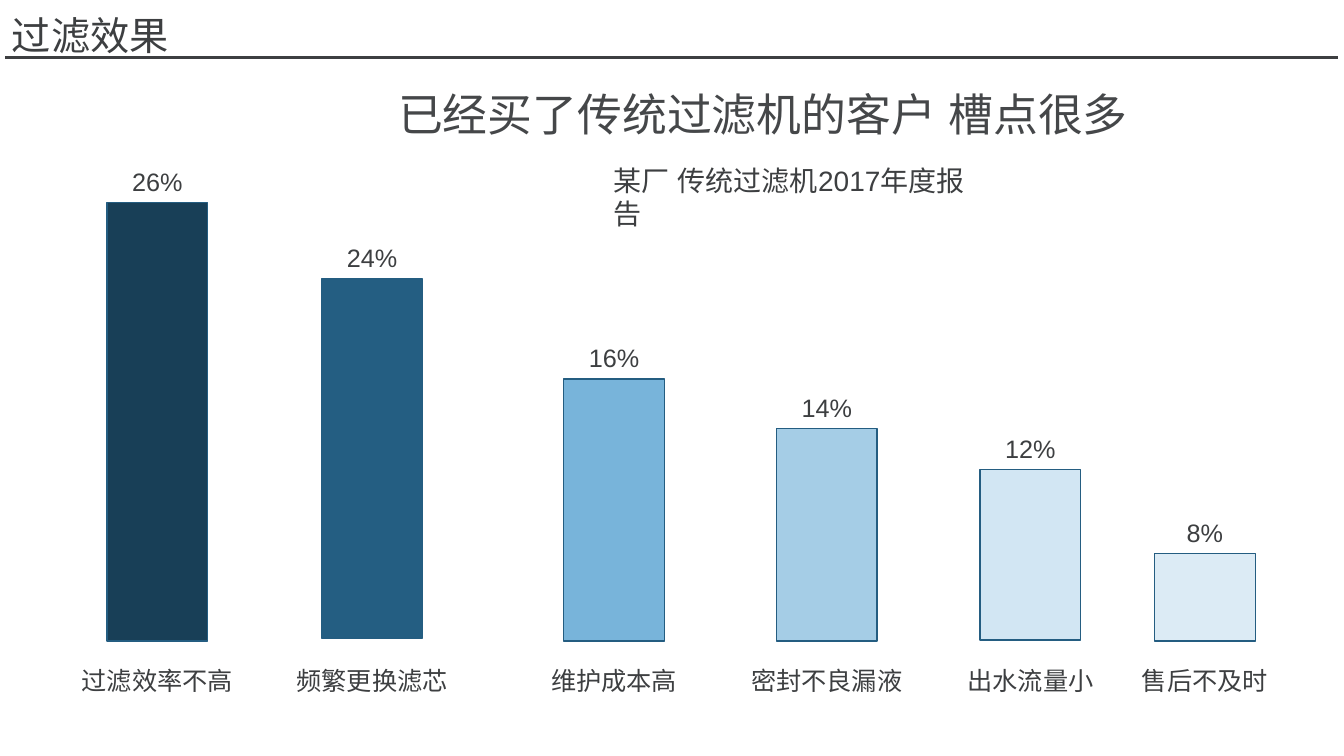
from pptx import Presentation
from pptx import util as u
from pptx.dml.color import RGBColor
from pptx.enum import shapes, text
from pptx.oxml.ns import qn
from lxml import etree

COLORS = {
    "text": "3D3F41",
    "headline": "454749",
    "outline": "245D81",
    "navy": "183F57",
    "blue": "245E82",
    "sky": "78B4DA",
    "light": "A5CDE6",
    "pale": "D2E6F3",
}

BAR_WIDTH = 1
LABEL_HEIGHT = 0.4
VALUE_RISE = 0.41
CATEGORY_TOP = 6.55

BARS = [
    ("过滤效率不高", "26%", 1.06, 2.01, 4.35, "navy", None),
    ("频繁更换滤芯", "24%", 3.19, 2.77, 3.56, "blue", None),
    ("维护成本高", "16%", 5.59, 3.76, 2.6, "sky", None),
    ("密封不良漏液", "14%", 7.7, 4.25, 2.11, "light", None),
    ("出水流量小", "12%", 9.72, 4.66, 1.69, "pale", None),
    ("售后不及时", "8%", 11.45, 5.49, 0.87, "pale", 77),
]


class SlideBuilder:
    """Draws styled elements on the current slide."""

    font = "Arial"

    def __init__(self, slide):
        self.slide = slide

    def color(self, name):
        return RGBColor.from_string(COLORS[name])

    def label(self, content, left, top, width, height, size=18,
              color="text", wrap=False, align=text.PP_ALIGN.LEFT):
        box = self.slide.shapes.add_textbox(
            u.Inches(left), u.Inches(top), u.Inches(width), u.Inches(height))
        frame = box.text_frame
        frame.text = content
        frame.word_wrap = wrap
        frame.auto_size = text.MSO_AUTO_SIZE.SHAPE_TO_FIT_TEXT
        paragraph = frame.paragraphs[0]
        paragraph.alignment = align
        for run in paragraph.runs:
            run.font.size = u.Pt(size)
            run.font.name = self.font
            run.font.color.rgb = self.color(color)
            east_asian = etree.SubElement(run.font._element, qn("a:ea"))
            east_asian.set("typeface", self.font)

    def rule(self, left, right, top):
        line = self.slide.shapes.add_connector(
            shapes.MSO_CONNECTOR.STRAIGHT,
            u.Inches(left), u.Inches(top), u.Inches(right), u.Inches(top))
        line.line.color.rgb = self.color("text")
        line.line.width = u.Pt(2.25)
        etree.SubElement(line._element.spPr, qn("a:effectLst"))

    def bar(self, left, top, height, color, opacity=None):
        shape = self.slide.shapes.add_shape(
            shapes.MSO_SHAPE.RECTANGLE, u.Inches(left), u.Inches(top),
            u.Inches(BAR_WIDTH), u.Inches(height))
        shape.shadow.inherit = False
        shape.fill.solid()
        shape.fill.fore_color.rgb = self.color(color)
        shape.line.color.rgb = self.color("outline")
        shape.line.width = u.Pt(1)
        if opacity is not None:
            fill = shape._element.spPr.find(qn("a:solidFill"))
            alpha = etree.SubElement(fill[0], qn("a:alpha"))
            alpha.set("val", str(opacity * 1000))

    def column(self, category, value, left, top, height, color, opacity):
        self.bar(left, top, height, color, opacity)
        center = left + BAR_WIDTH / 2
        category_width = 0.2 + 0.25 * len(category)
        for content, width, label_top in (
                (value, 0.7, top - VALUE_RISE),
                (category, category_width, CATEGORY_TOP)):
            self.label(content, center - width / 2, label_top, width,
                       LABEL_HEIGHT, align=text.PP_ALIGN.CENTER)


def main():
    presentation = Presentation()
    presentation.slide_width = u.Inches(13.33)
    presentation.slide_height = u.Inches(7.5)
    slide = presentation.slides.add_slide(presentation.slide_layouts[6])
    builder = SlideBuilder(slide)

    builder.label("过滤效果", 0.02, 0.06, 1.76, 0.57, size=28)
    builder.rule(0.05, 13.27, 0.57)
    builder.label("已经买了传统过滤机的客户 槽点很多", 3.85, 0.81, 7.7, 0.64,
                  size=32, color="headline", wrap=True)
    builder.label("某厂 传统过滤机2017年度报告", 5.99, 1.57, 3.95, 0.44,
                  size=20, wrap=True)
    for bar in BARS:
        builder.column(*bar)

    presentation.save("out.pptx")


if __name__ == "__main__":
    main()
